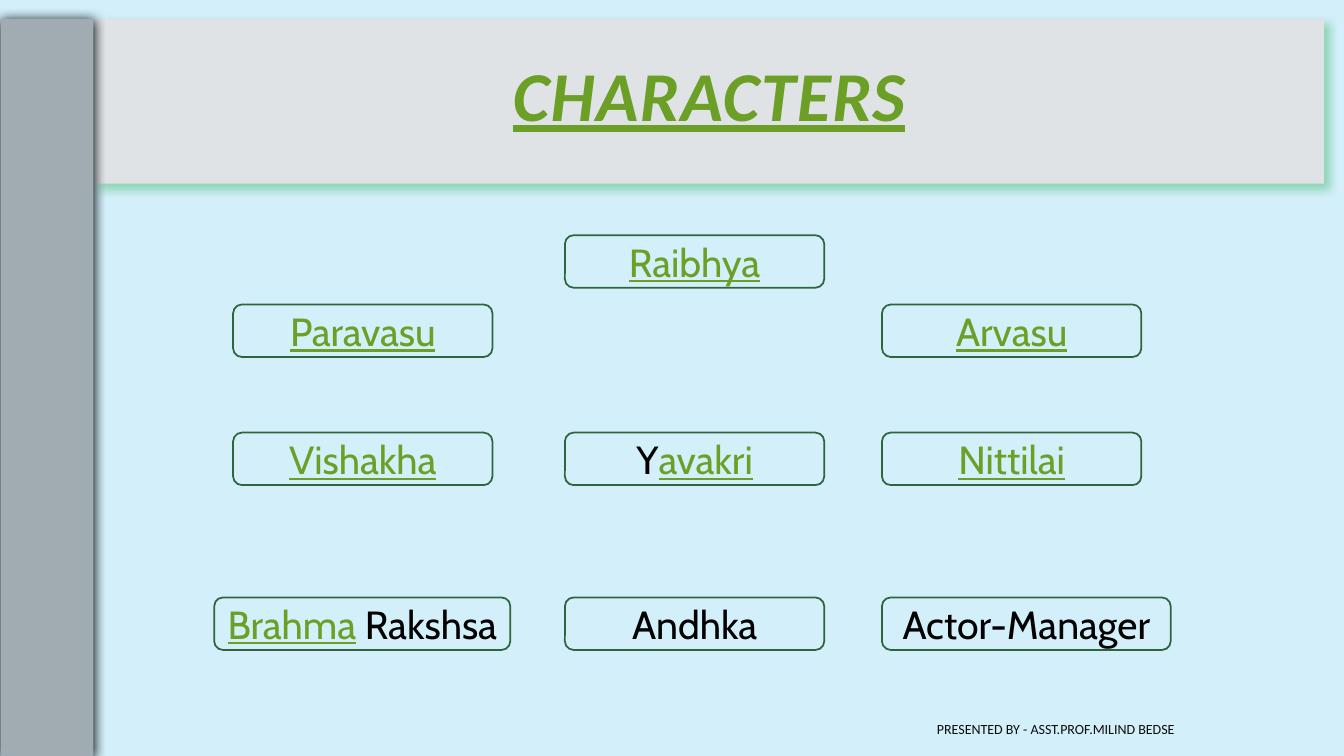
from dataclasses import dataclass

from lxml.etree import SubElement
from pptx import Presentation
from pptx.dml.color import RGBColor
from pptx.enum.shapes import MSO_SHAPE
from pptx.enum.text import MSO_ANCHOR, MSO_AUTO_SIZE, PP_ALIGN
from pptx.oxml.ns import qn
from pptx.shapes.autoshape import Shape
from pptx.slide import Slide
from pptx.text.text import Font
from pptx.util import Emu, Pt

EMU_PER_PX = 9525
EMU_PER_PT = 12700


@dataclass(frozen=True)
class Theme:
    background: str = "D2EFFA"
    banner: str = "DFE3E5"
    banner_shadow: str = "8FD5B5"
    sidebar: str = "A1ACB2"
    outline: str = "2E653D"
    link: str = "6B9F25"
    text: str = "000000"
    credit: str = "0D0D0D"
    heading_font: str = "Calibri"
    name_font: str = "Cabin"
    title_size: int = 50
    name_size: int = 28
    credit_size: int = 10
    outline_width: float = 1.25


@dataclass(frozen=True)
class Shadow:
    color: str
    blur: float
    distance: float
    angle: int


@dataclass(frozen=True)
class NamePiece:
    text: str
    linked: bool = True


@dataclass(frozen=True)
class Character:
    pieces: tuple[NamePiece, ...]
    left: int
    top: int
    width: int = 247


THEME = Theme()
NAME_HEIGHT = 50
LEFT, MIDDLE, RIGHT = 222, 538, 840
FATHER_ROW, SONS_ROW, MIDDLE_ROW, BOTTOM_ROW = 224, 290, 412, 569

CHARACTERS = (
    Character((NamePiece("Raibhya"),), MIDDLE, FATHER_ROW),
    Character((NamePiece("Paravasu"),), LEFT, SONS_ROW),
    Character((NamePiece("Arvasu"),), RIGHT, SONS_ROW),
    Character((NamePiece("Vishakha"),), LEFT, MIDDLE_ROW),
    Character((NamePiece("Y", False), NamePiece("avakri")), MIDDLE, MIDDLE_ROW),
    Character((NamePiece("Nittilai"),), RIGHT, MIDDLE_ROW),
    Character((NamePiece("Brahma"), NamePiece(" Rakshsa", False)), 204, BOTTOM_ROW, 282),
    Character((NamePiece("Andhka", False),), MIDDLE, BOTTOM_ROW),
    Character((NamePiece("Actor-Manager", False),), RIGHT, BOTTOM_ROW, 275),
)


def px(length: int) -> Emu:
    return Emu(length * EMU_PER_PX)


def style_font(font: Font, family: str, size: int, color: str) -> None:
    font.name = family
    font.size = Pt(size)
    font.color.rgb = RGBColor.from_string(color)


def fill_solid(shape: Shape, color: str) -> None:
    shape.fill.solid()
    shape.fill.fore_color.rgb = RGBColor.from_string(color)


def cast_shadow(shape: Shape, shadow: Shadow) -> None:
    properties = shape._element.spPr
    effects = properties.find(qn("a:effectLst"))
    if effects is None:
        effects = SubElement(properties, qn("a:effectLst"))
    outer = SubElement(
        effects, qn("a:outerShdw"),
        blurRad=str(int(shadow.blur * EMU_PER_PT)),
        dist=str(int(shadow.distance * EMU_PER_PT)),
        dir=str(shadow.angle * 60000), algn="ctr", rotWithShape="0",
    )
    SubElement(outer, qn("a:srgbClr"), val=shadow.color)


def add_title(slide: Slide) -> None:
    title = slide.shapes.title
    title.left, title.top, title.width, title.height = map(px, (90, 18, 1171, 157))
    fill_solid(title, THEME.banner)
    cast_shadow(title, Shadow(THEME.banner_shadow, 6, 4, 45))
    frame = title.text_frame
    frame.text = "CHARACTERS"
    frame.auto_size = MSO_AUTO_SIZE.NONE
    frame.vertical_anchor = MSO_ANCHOR.MIDDLE
    paragraph = frame.paragraphs[0]
    paragraph.alignment = PP_ALIGN.CENTER
    paragraph.line_spacing = 0.8
    font = paragraph.runs[0].font
    style_font(font, THEME.heading_font, THEME.title_size, THEME.link)
    font.bold = font.italic = font.underline = True
    font._element.set("spc", "100")


def add_sidebar(slide: Slide) -> None:
    sidebar = slide.shapes.add_shape(
        MSO_SHAPE.RECTANGLE, px(1), px(18), px(88), px(702))
    fill_solid(sidebar, THEME.sidebar)
    sidebar.line.fill.background()
    sidebar.shadow.inherit = False
    cast_shadow(sidebar, Shadow(THEME.text, 8.5, 1, 90))


def add_character(slide: Slide, character: Character) -> None:
    plate = slide.shapes.add_shape(
        MSO_SHAPE.ROUNDED_RECTANGLE, px(character.left), px(character.top),
        px(character.width), px(NAME_HEIGHT))
    plate.fill.background()
    plate.line.color.rgb = RGBColor.from_string(THEME.outline)
    plate.line.width = Pt(THEME.outline_width)
    plate.shadow.inherit = False
    frame = plate.text_frame
    frame.margin_left = frame.margin_right = 0
    frame.vertical_anchor = MSO_ANCHOR.MIDDLE
    paragraph = frame.paragraphs[0]
    paragraph.alignment = PP_ALIGN.CENTER
    for piece in character.pieces:
        run = paragraph.add_run()
        run.text = piece.text
        color = THEME.link if piece.linked else THEME.text
        style_font(run.font, THEME.name_font, THEME.name_size, color)
        run.font.underline = piece.linked


def add_credit(slide: Slide) -> None:
    credit = slide.shapes.add_textbox(px(509), px(680), px(619), px(29))
    frame = credit.text_frame
    frame.text = "PRESENTED BY - ASST.PROF.MILIND BEDSE"
    frame.word_wrap = True
    frame.vertical_anchor = MSO_ANCHOR.MIDDLE
    paragraph = frame.paragraphs[0]
    paragraph.alignment = PP_ALIGN.RIGHT
    style_font(paragraph.runs[0].font, THEME.heading_font, THEME.credit_size, THEME.credit)


def main() -> None:
    presentation = Presentation()
    presentation.slide_width, presentation.slide_height = px(1280), px(720)
    slide = presentation.slides.add_slide(presentation.slide_layouts[5])
    slide.background.fill.solid()
    slide.background.fill.fore_color.rgb = RGBColor.from_string(THEME.background)
    add_title(slide)
    add_sidebar(slide)
    for character in CHARACTERS:
        add_character(slide, character)
    add_credit(slide)
    presentation.save("out.pptx")


if __name__ == "__main__":
    main()
